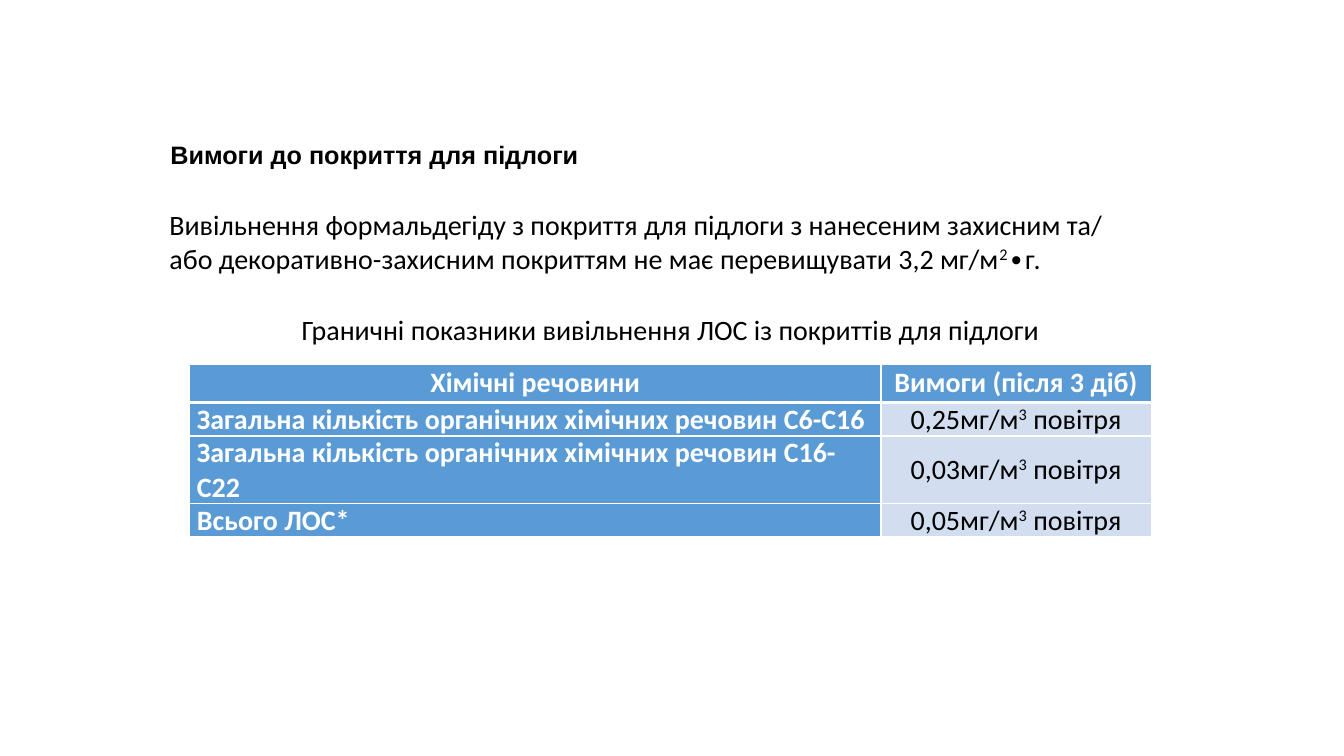
from lxml.etree import SubElement
from pptx import Presentation
from pptx.dml.color import RGBColor
from pptx.enum.text import MSO_ANCHOR as Anchor, MSO_AUTO_SIZE as AutoSize, PP_ALIGN as Align
from pptx.oxml.ns import qn
from pptx.util import Cm, Pt

COLORS = {"text": "000000", "white": "FFFFFF", "header": "5B9BD5", "value": "D2DEEF"}


def add_runs(paragraph, text, color="text", bold=False, font="Calibri", size=20):
    """Write text run by run; every second part between ^ marks is superscript."""
    for i, part in enumerate(text.split("^")):
        run = paragraph.add_run()
        run.text = part
        run.font.name = font
        run.font.size = Pt(size)
        run.font.bold = bold
        run.font.color.rgb = RGBColor.from_string(COLORS[color])
        if i % 2:
            run.font._element.set("baseline", "30000")


def add_body(left, top, width, height, lines, wrap):
    """Add a justified text box with a first-line indent and a right tab."""
    frame = slide.shapes.add_textbox(Cm(left), Cm(top), Cm(width), Cm(height)).text_frame
    frame.word_wrap = wrap
    frame.auto_size = AutoSize.SHAPE_TO_FIT_TEXT
    for i, line in enumerate(lines):
        paragraph = frame.add_paragraph() if i else frame.paragraphs[0]
        paragraph.alignment = Align.JUSTIFY
        properties = paragraph._p.get_or_add_pPr()
        properties.set("indent", str(Cm(1.25)))
        tabs = SubElement(properties, qn("a:tabLst"))
        SubElement(tabs, qn("a:tab"), pos=str(Cm(17)), algn="r")
        add_runs(paragraph, line)
    return frame


prs = Presentation()
prs.slide_width, prs.slide_height = Cm(33.87), Cm(19.05)
slide = prs.slides.add_slide(prs.slide_layouts[5])

# Title
title = slide.shapes.title
title.left, title.top, title.width, title.height = Cm(4.04), Cm(3.38), Cm(11.1), Cm(1.02)
title.text_frame.word_wrap = False
title.text_frame.auto_size = AutoSize.NONE
title.text_frame.vertical_anchor = Anchor.TOP
heading = title.text_frame.paragraphs[0]
heading.alignment = Align.LEFT
add_runs(heading, "Вимоги до покриття для підлоги", bold=True, font="Arial", size=18)

# Formaldehyde requirement and table caption
requirement = add_body(2.77, 5.1, 25.5, 1.96, [
    "Вивільнення формальдегіду з покриття для підлоги з нанесеним захисним та/",
    "або декоративно-захисним покриттям не має перевищувати 3,2 мг/м^2^∙г.",
], wrap=False)
requirement.vertical_anchor = Anchor.MIDDLE
add_body(6.1, 7.75, 21.62, 1.12,
         ["Граничні показники вивільнення ЛОС із покриттів для підлоги"], wrap=True)

# Emission limits table
limits = [
    ("Хімічні речовини", "Вимоги (після 3 діб)"),
    ("Загальна кількість органічних хімічних речовин С6-С16", "0,25мг/м^3^ повітря"),
    ("Загальна кількість органічних хімічних речовин С16-С22", "0,03мг/м^3^ повітря"),
    ("Всього ЛОС*", "0,05мг/м^3^ повітря"),
]
table = slide.shapes.add_table(len(limits), 2, Cm(4.78), Cm(9.17), Cm(24.23), Cm(3.13)).table
table.columns[0].width, table.columns[1].width = Cm(17.42), Cm(6.81)
for r, row in enumerate(limits):
    table.rows[r].height = Cm(0.72 if r else 0.97)
    for c, text in enumerate(row):
        is_value = r > 0 and c == 1
        cell = table.cell(r, c)
        cell.margin_left = cell.margin_right = Cm(0.18)
        cell.margin_top = cell.margin_bottom = 0
        cell.vertical_anchor = Anchor.MIDDLE
        paragraph = cell.text_frame.paragraphs[0]
        paragraph.alignment = Align.LEFT if r and not c else Align.CENTER
        add_runs(paragraph, text, "text" if is_value else "white", bold=not is_value)

        # White borders, thicker under the header
        cell_properties = cell._tc.get_or_add_tcPr()
        for side in ("L", "R", "T", "B"):
            under_header = (r, side) in ((0, "B"), (1, "T"))
            border = SubElement(cell_properties, qn(f"a:ln{side}"),
                                w=str(Pt(3 if under_header else 1)))
            border_fill = SubElement(border, qn("a:solidFill"))
            SubElement(border_fill, qn("a:srgbClr"), val=COLORS["white"])
        cell.fill.solid()
        cell.fill.fore_color.rgb = RGBColor.from_string(COLORS["value" if is_value else "header"])

prs.save("out.pptx")
